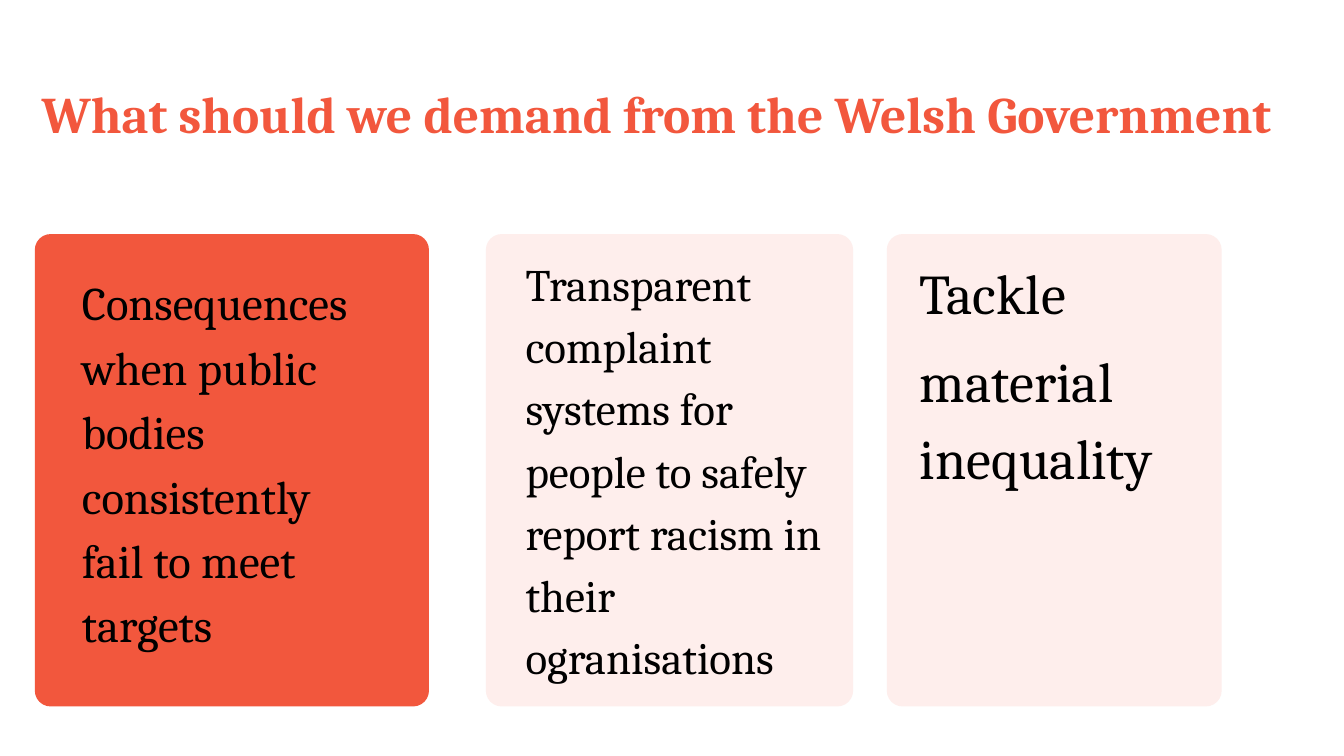
from pptx import Presentation
from pptx.dml.color import RGBColor
from pptx.enum.shapes import MSO_SHAPE as Shape
from pptx.enum.text import MSO_ANCHOR as Anchor, PP_ALIGN as Align
from pptx.util import Inches, Pt

WIDE, HIGH = 21.99, 12.37
FONT = "Cambria"
COLORS = {"red": "F2573D", "pale": "FEEEEC", "ink": "000000"}
TITLE = "What should we demand from the Welsh Government"

# Places are left, top, width, height in percent of the slide
TITLE_AT = (3.09, 9.7, 93.82, 9.46)
CARD_TOP, CARD_HIGH = 30.96, 62.49
RADIUS = 0.26
CARDS = [
    {"left": 2.59, "width": 29.33, "fill": "red",
     "text": ["Consequences when public bodies consistently fail to meet targets"],
     "at": (3.82, 33.95, 23.56, 60.06),
     "form": {"size": 55, "indent": 0.5}},
    {"left": 36.15, "width": 27.33, "fill": "pale",
     "text": ["Transparent complaint systems for people to safely report "
              "racism in their ogranisations"],
     "at": (36.83, 31.69, 24.92, 58.21),
     "form": {"size": 53, "indent": 0.5}},
    {"left": 65.98, "width": 24.92, "fill": "pale",
     "text": ["Tackle", "material inequality"],
     "at": (68.44, 31.69, 18.1, 32.26),
     "form": {"size": 66, "align": Align.JUSTIFY}},
]


def rgb(name):
    return RGBColor.from_string(COLORS[name])


def place(left, top, width, height):
    """Turn percent of the slide into lengths."""
    return (Inches(left * WIDE / 100), Inches(top * HIGH / 100),
            Inches(width * WIDE / 100), Inches(height * HIGH / 100))


def write(shape, lines, size, color="ink", bold=False, align=Align.LEFT,
          indent=0, pitch=1.15, gap=12):
    frame = shape.text_frame
    frame.word_wrap = True
    frame.vertical_anchor = Anchor.TOP
    frame.margin_left = frame.margin_right = frame.margin_bottom = 0
    frame.margin_top = Inches(0.15)
    for i, line in enumerate(lines):
        para = frame.add_paragraph() if i else frame.paragraphs[0]
        para.text = line
        para.alignment = align
        para.line_spacing = pitch
        para.space_before = Pt(gap if i else 0)
        para._p.get_or_add_pPr().set("marL", str(Inches(indent)))
        font = para.runs[0].font
        font.name, font.size, font.bold = FONT, Pt(size), bold
        font.color.rgb = rgb(color)


def main():
    deck = Presentation()
    deck.slide_width, deck.slide_height = Inches(WIDE), Inches(HIGH)
    slide = deck.slides.add_slide(deck.slide_layouts[5])

    title = slide.shapes.title
    title.left, title.top, title.width, title.height = place(*TITLE_AT)
    write(title, [TITLE], 60.5, color="red", bold=True, pitch=1.0)

    for card in CARDS:
        box = slide.shapes.add_shape(
            Shape.ROUNDED_RECTANGLE,
            *place(card["left"], CARD_TOP, card["width"], CARD_HIGH))
        box.adjustments[0] = Inches(RADIUS) / min(box.width, box.height)
        box.shadow.inherit = False
        box.fill.solid()
        box.fill.fore_color.rgb = rgb(card["fill"])
        box.line.fill.background()
        label = slide.shapes.add_textbox(*place(*card["at"]))
        write(label, card["text"], **card["form"])

    deck.save("out.pptx")


if __name__ == "__main__":
    main()
